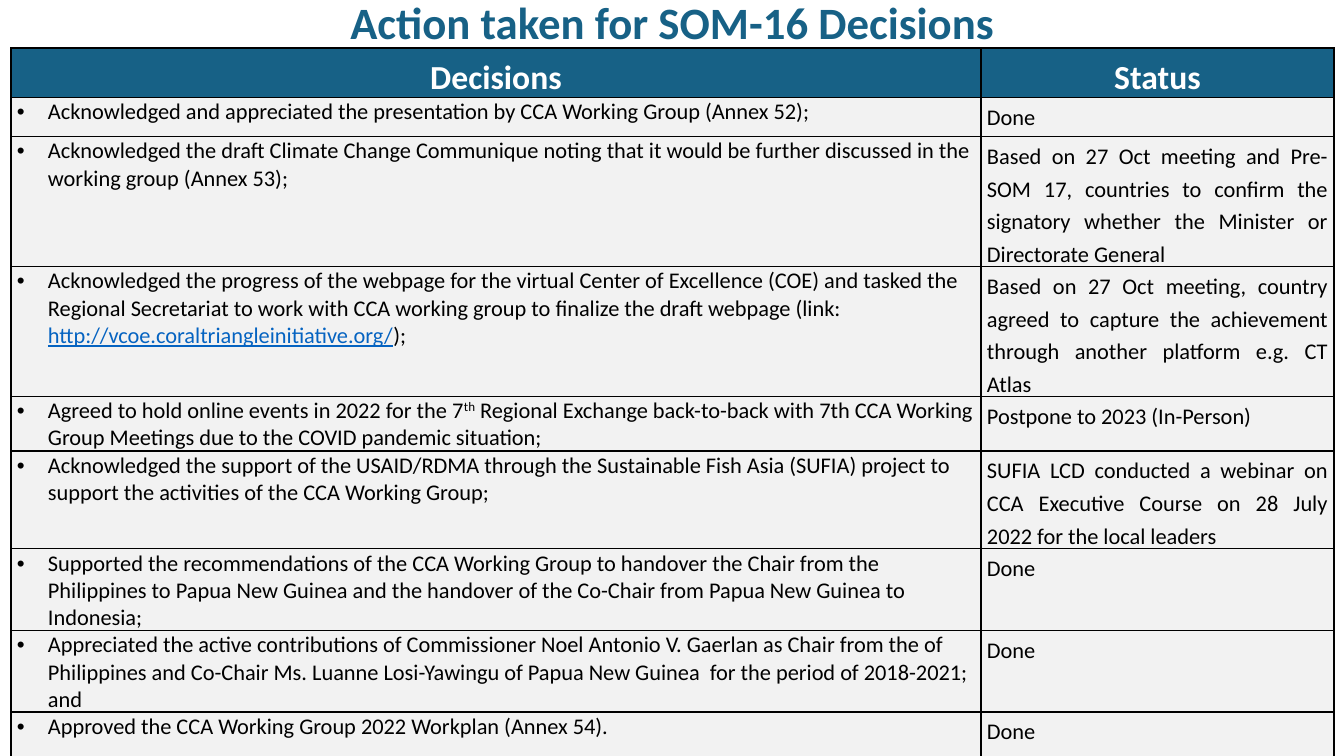
from lxml import etree
from pptx import Presentation
from pptx.dml.color import RGBColor
from pptx.enum.text import MSO_ANCHOR, PP_ALIGN
from pptx.oxml.ns import qn
from pptx.util import Pt

CENTER, JUSTIFY, LEFT = PP_ALIGN.CENTER, PP_ALIGN.JUSTIFY, PP_ALIGN.LEFT
TOP, MIDDLE = MSO_ANCHOR.TOP, MSO_ANCHOR.MIDDLE

# Content: (row height, decision spans, status); a span is (text, style)
TITLE = "Action taken for SOM-16 Decisions"
HEADINGS = ["Decisions", "Status"]
HEADING_HEIGHT = 44
ROWS = [
    (39, [("Acknowledged and appreciated the presentation by CCA Working Group (Annex 52);", "")],
     "Done"),
    (125, [("Acknowledged the draft Climate Change Communique noting that it would be further "
            "discussed in the working group (Annex 53);", "")],
     "Based on 27 Oct meeting and Pre-SOM 17, countries to confirm the signatory whether "
     "the Minister or Directorate General"),
    (125, [("Acknowledged the progress of the webpage for the virtual Center of Excellence (COE) "
            "and tasked the Regional Secretariat to work with CCA working group to finalize the "
            "draft webpage (link: ", ""),
           ("http://vcoe.coraltriangleinitiative.org/", "address"),
           (");", "")],
     "Based on 27 Oct meeting, country agreed to capture the achievement through another "
     "platform e.g. CT Atlas"),
    (53, [("Agreed to hold online events in 2022 for the 7", ""),
          ("th", "raised"),
          (" Regional Exchange back-to-back with 7th CCA Working Group Meetings due to the "
           "COVID pandemic situation;", "")],
     "Postpone to 2023 (In-Person)"),
    (93, [("Acknowledged the support of the USAID/RDMA through the Sustainable Fish Asia (SUFIA) "
           "project to support the activities of the CCA Working Group;", "")],
     "SUFIA LCD conducted a webinar on CCA Executive Course on 28 July 2022 for the local leaders"),
    (80, [("Supported the recommendations of the CCA Working Group to handover the Chair from the "
           "Philippines to Papua New Guinea and the handover of the Co-Chair from Papua New "
           "Guinea to Indonesia;", "")],
     "Done"),
    (80, [("Appreciated the active contributions of Commissioner Noel Antonio V. Gaerlan as Chair "
           "from the of Philippines and Co-Chair Ms. Luanne Losi-Yawingu of Papua New Guinea  "
           "for the period of 2018-2021; and", "")],
     "Done"),
    (50, [("Approved the CCA Working Group 2022 Workplan (Annex 54).", "")],
     "Done"),
]

# Look
FONT = "Calibri"
BLUE, WHITE, BLACK, GRAY, ADDRESS = "176186", "FFFFFF", "000000", "F2F2F2", "0563C1"
SLIDE_SIZE = (1344, 756)
TITLE_BOX = (93, -10, 1159, 59)
TABLE_LEFT, TABLE_TOP = 11, 48
COLUMN_WIDTHS = [970, 353]
CELL_MARGINS = (6, 1, 6, 0)
BULLET_INDENT = 31


def px(length):
    return round(length * 914400 / 100.8)


def color(value):
    return RGBColor.from_string(value)


def add_span(para, text, size, ink, bold=False, style=""):
    span = para.add_run()
    span.text = text
    font = span.font
    font.name, font.size, font.bold = FONT, Pt(size), bold
    font.color.rgb = color(ADDRESS if style == "address" else ink)
    if style == "address":
        font.underline = True
    if style == "raised":
        font._element.set("baseline", "30000")


def set_bullet(para):
    properties = para._p.get_or_add_pPr()
    properties.set("marL", str(px(BULLET_INDENT)))
    properties.set("indent", str(-px(BULLET_INDENT)))
    ink = etree.SubElement(properties, qn("a:buClr"))
    etree.SubElement(ink, qn("a:srgbClr"), val=BLACK)
    etree.SubElement(properties, qn("a:buFont"), typeface="Arial")
    etree.SubElement(properties, qn("a:buChar"), char="•")


def style_cell(cell, fill, anchor):
    cell.vertical_anchor = anchor
    (cell.margin_left, cell.margin_top,
     cell.margin_right, cell.margin_bottom) = map(px, CELL_MARGINS)
    properties = cell._tc.get_or_add_tcPr()
    for side in ("lnL", "lnR", "lnT", "lnB"):
        line = etree.SubElement(properties, qn(f"a:{side}"), w=str(Pt(1)))
        solid = etree.SubElement(line, qn("a:solidFill"))
        etree.SubElement(solid, qn("a:srgbClr"), val=BLACK)
    cell.fill.solid()
    cell.fill.fore_color.rgb = color(fill)


def add_title(page):
    box = page.shapes.add_textbox(*map(px, TITLE_BOX))
    frame = box.text_frame
    frame.word_wrap = True
    frame.vertical_anchor = MIDDLE
    para = frame.paragraphs[0]
    para.alignment, para.line_spacing = CENTER, 1.07
    add_span(para, TITLE, 32, BLUE, bold=True)


def add_decisions(page):
    heights = [HEADING_HEIGHT] + [height for height, _, _ in ROWS]
    table = page.shapes.add_table(
        len(heights), len(COLUMN_WIDTHS), px(TABLE_LEFT), px(TABLE_TOP),
        px(sum(COLUMN_WIDTHS)), px(sum(heights))).table
    table.first_row = table.horz_banding = False
    for column, width in zip(table.columns, COLUMN_WIDTHS):
        column.width = px(width)
    for row, height in zip(table.rows, heights):
        row.height = px(height)

    # Heading row
    for index, heading in enumerate(HEADINGS):
        cell = table.cell(0, index)
        style_cell(cell, BLUE, MIDDLE)
        para = cell.text_frame.paragraphs[0]
        para.alignment, para.line_spacing = CENTER, 1.2
        add_span(para, heading, 24, WHITE, bold=True)

    # Decision rows
    for index, (_, decision, status) in enumerate(ROWS, start=1):
        for column, spans in enumerate([decision, [(status, "")]]):
            cell = table.cell(index, column)
            style_cell(cell, GRAY, TOP)
            para = cell.text_frame.paragraphs[0]
            if column == 0:
                set_bullet(para)
            else:
                para.alignment = LEFT if status == "Done" else JUSTIFY
                para.line_spacing = 1.2
            for text, style in spans:
                add_span(para, text, 16, BLACK, style=style)


def main():
    deck = Presentation()
    deck.slide_width, deck.slide_height = map(px, SLIDE_SIZE)
    page = deck.slides.add_slide(deck.slide_layouts[6])
    add_title(page)
    add_decisions(page)
    deck.save("out.pptx")


if __name__ == "__main__":
    main()
